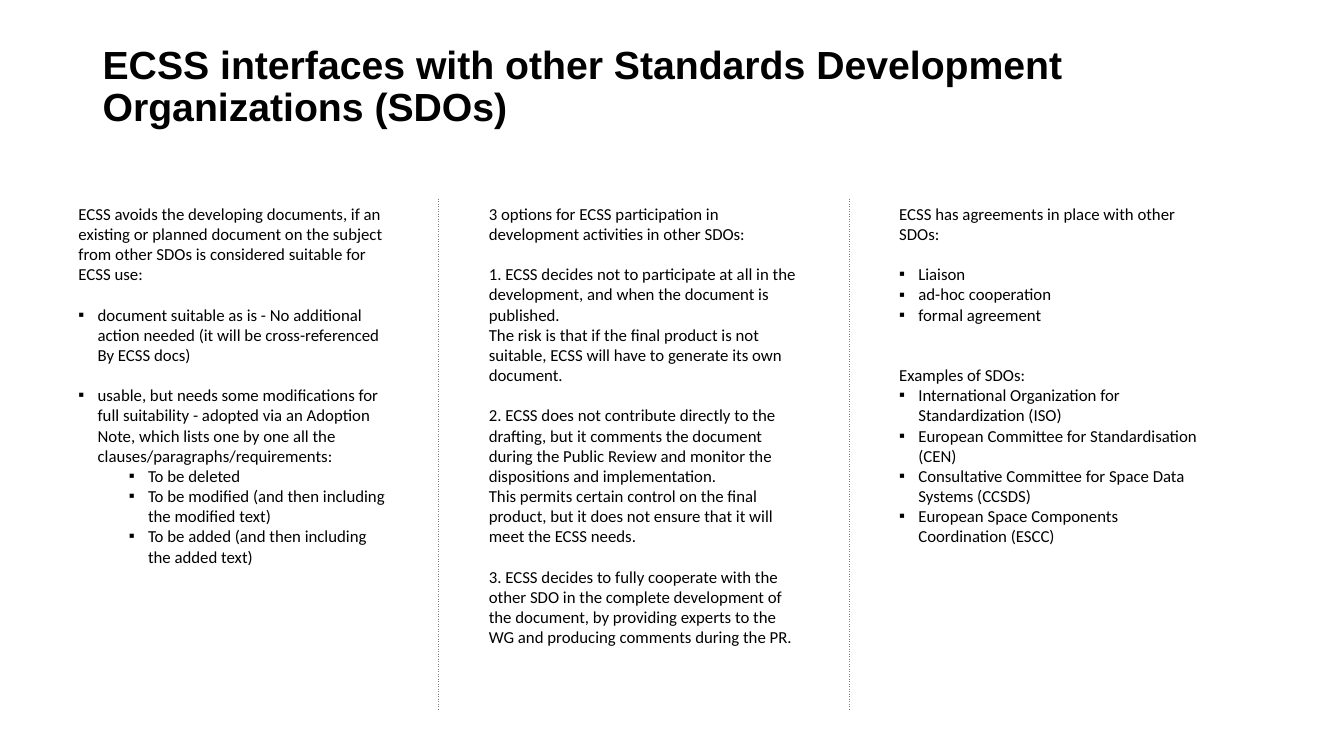
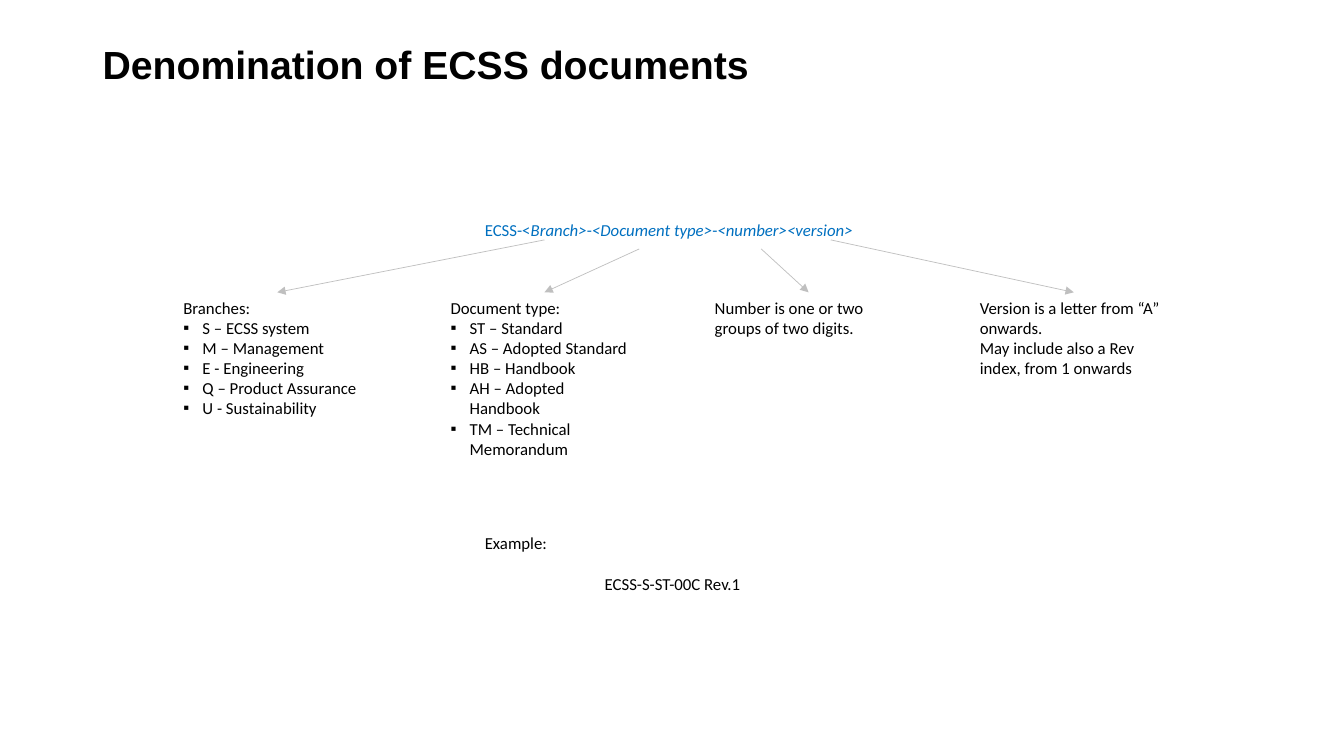
"""Build two slides on ECSS interfaces and on the naming of ECSS documents."""
from collections import namedtuple

from lxml import etree
from pptx import Presentation
from pptx.dml.color import RGBColor
from pptx.enum.dml import MSO_LINE
from pptx.enum.shapes import MSO_CONNECTOR
from pptx.enum.text import PP_ALIGN
from pptx.oxml.ns import qn
from pptx.util import Pt

EMU_PER_PX = 9144
STRAIGHT = MSO_CONNECTOR.STRAIGHT
DASH = MSO_LINE.DASH
LEFT, CENTER = PP_ALIGN.LEFT, PP_ALIGN.CENTER

COLORS = {"text": "000000", "accent": "0070C0", "divider": "808080", "arrow": "BFBFBF"}
TITLE_FONT, BODY_FONT = "Arial", "Calibri"
TITLE_SIZE, BODY_SIZE = 28, 12
LINE_GAP = 14.4
HANG = 19
SUB_INDENT = 69

COLUMN_X, COLUMN_Y, COLUMN_W, COLUMN_H = 68, 197, 327, 486
COLUMN_STEP = 407
DIVIDER_GAP, DIVIDER_BOTTOM = 40, 704
PART_Y, PART_W, PART_H = 290, 206, 191
CENTER_X, CENTER_W = 471, 392

Para = namedtuple("Para", "text indent gap align", defaults=(0, 0, LEFT))


def bullet(text, gap=0):
    return Para(text, HANG, gap)


def sub_bullet(text):
    return Para(text, SUB_INDENT)


COLUMNS = [
    [
        Para("ECSS avoids the developing documents, if an existing or planned document on the "
             "subject from other SDOs is considered suitable for ECSS use:"),
        bullet("document suitable as is - No additional action needed (it will be "
               "cross-referenced By ECSS docs)", gap=1),
        bullet("usable, but needs some modifications for full suitability - adopted via an "
               "Adoption Note, which lists one by one all the "
               "clauses/paragraphs/requirements:", gap=1),
        sub_bullet("To be deleted"),
        sub_bullet("To be modified (and then including the modified text)"),
        sub_bullet("To be added (and then including the added text)"),
    ],
    [
        Para("3 options for ECSS participation in development activities in other SDOs:"),
        Para("1. ECSS decides not to participate at all in the development, and when the "
             "document is published.", gap=1),
        Para("The risk is that if the final product is not suitable, ECSS will have to "
             "generate its own document."),
        Para("2. ECSS does not contribute directly to the drafting, but it comments the "
             "document during the Public Review and monitor the dispositions and "
             "implementation.", gap=1),
        Para("This permits certain control on the final product, but it does not ensure that "
             "it will meet the ECSS needs."),
        Para("3. ECSS decides to fully cooperate with the other SDO in the complete "
             "development of the document, by providing experts to the WG and producing "
             "comments during the PR.", gap=1),
    ],
    [
        Para("ECSS has agreements in place with other SDOs:"),
        bullet("Liaison", gap=1),
        bullet("ad-hoc cooperation"),
        bullet("formal agreement"),
        Para("Examples of SDOs:", gap=2),
        bullet("International Organization for Standardization (ISO)"),
        bullet("European Committee for Standardisation (CEN)"),
        bullet("Consultative Committee for Space Data Systems (CCSDS)"),
        bullet("European Space Components Coordination (ESCC)"),
    ],
]

FORMULA = [
    ("ECSS-<", False), ("Branch>", True), ("-", False),
    ("<Document type>", True), ("-", False), ("<number><version>", True),
]

NAME_PARTS = [
    (172, (540, 238), [
        Para("Branches:"),
        bullet("S – ECSS system"),
        bullet("M – Management"),
        bullet("E - Engineering"),
        bullet("Q – Product Assurance"),
        bullet("U - Sustainability"),
    ]),
    (437, (634, 247), [
        Para("Document type:"),
        bullet("ST – Standard"),
        bullet("AS – Adopted Standard"),
        bullet("HB – Handbook"),
        bullet("AH – Adopted Handbook"),
        bullet("TM – Technical Memorandum"),
    ]),
    (699, (755, 247), [Para("Number is one or two groups of two digits.")]),
    (962, (824, 238), [
        Para("Version is a letter from “A” onwards."),
        Para("May include also a Rev index, from 1 onwards"),
    ]),
]

EXAMPLE = [Para("Example:"), Para("ECSS-S-ST-00C Rev.1", gap=1, align=CENTER)]


def px(value):
    return value * EMU_PER_PX


def rgb(name):
    return RGBColor.from_string(COLORS[name])


def style_run(r, size=BODY_SIZE, font=BODY_FONT, color="text", bold=False, italic=False):
    r.font.size = Pt(size)
    r.font.name = font
    r.font.color.rgb = rgb(color)
    r.font.bold = bold
    r.font.italic = italic


def add_box(slide, x, y, w, h):
    sp = slide.shapes.add_textbox(px(x), px(y), px(w), px(h))
    sp.text_frame.word_wrap = True
    return sp


def add_title(slide, text):
    p = add_box(slide, 92, 40, 1150, 145).text_frame.paragraphs[0]
    p.text = text
    p.line_spacing = 0.9
    style_run(p.runs[0], TITLE_SIZE, TITLE_FONT, bold=True)


def set_bullet(p, indent):
    pPr = p._p.get_or_add_pPr()
    pPr.set("marL", str(px(indent)))
    pPr.set("indent", str(px(-HANG)))
    etree.SubElement(pPr, qn("a:buFont")).set("typeface", TITLE_FONT)
    etree.SubElement(pPr, qn("a:buChar")).set("char", "▪")


def add_paragraphs(slide, x, y, w, h, paras):
    sp = add_box(slide, x, y, w, h)
    tf = sp.text_frame
    for i, para in enumerate(paras):
        p = tf.add_paragraph() if i else tf.paragraphs[0]
        p.text = para.text
        p.alignment = para.align
        if para.indent:
            set_bullet(p, para.indent)
        if para.gap:
            p.space_before = Pt(para.gap * LINE_GAP)
        style_run(p.runs[0])
    return sp


def add_formula(slide, x, y, w, h):
    p = add_box(slide, x, y, w, h).text_frame.paragraphs[0]
    for text, italic in FORMULA:
        r = p.add_run()
        r.text = text
        style_run(r, color="accent", italic=italic)


def add_line(slide, start, end, color, width):
    line = slide.shapes.add_connector(STRAIGHT, *map(px, start + end))
    line.line.color.rgb = rgb(color)
    line.line.width = Pt(width)
    etree.SubElement(line._element.spPr, qn("a:effectLst"))
    return line


def add_divider(slide, x):
    line = add_line(slide, (x, COLUMN_Y), (x, DIVIDER_BOTTOM), "divider", 0.25)
    line.line.dash_style = DASH


def add_arrow(slide, start, box, end):
    line = add_line(slide, start, end, "arrow", 0.5)
    line.end_connect(box, 0)
    etree.SubElement(line.line._get_or_add_ln(), qn("a:tailEnd")).set("type", "triangle")


def build_interfaces(slide):
    add_title(slide, "ECSS interfaces with other Standards Development Organizations (SDOs)")
    for i, paras in enumerate(COLUMNS):
        x = COLUMN_X + i * COLUMN_STEP
        if i:
            add_divider(slide, x - DIVIDER_GAP)
        add_paragraphs(slide, x, COLUMN_Y, COLUMN_W, COLUMN_H, paras)


def build_denomination(slide):
    add_title(slide, "Denomination of ECSS documents")
    add_formula(slide, CENTER_X, 213, CENTER_W, 34)
    for x, start, paras in NAME_PARTS:
        box = add_paragraphs(slide, x, PART_Y, PART_W, PART_H, paras)
        add_arrow(slide, start, box, (x + PART_W // 2, PART_Y))
    add_paragraphs(slide, CENTER_X, 524, CENTER_W, 87, EXAMPLE)


def main():
    prs = Presentation()
    prs.slide_width, prs.slide_height = px(1333), px(750)
    for build in (build_interfaces, build_denomination):
        build(prs.slides.add_slide(prs.slide_layouts[6]))
    prs.save("out.pptx")


if __name__ == "__main__":
    main()
